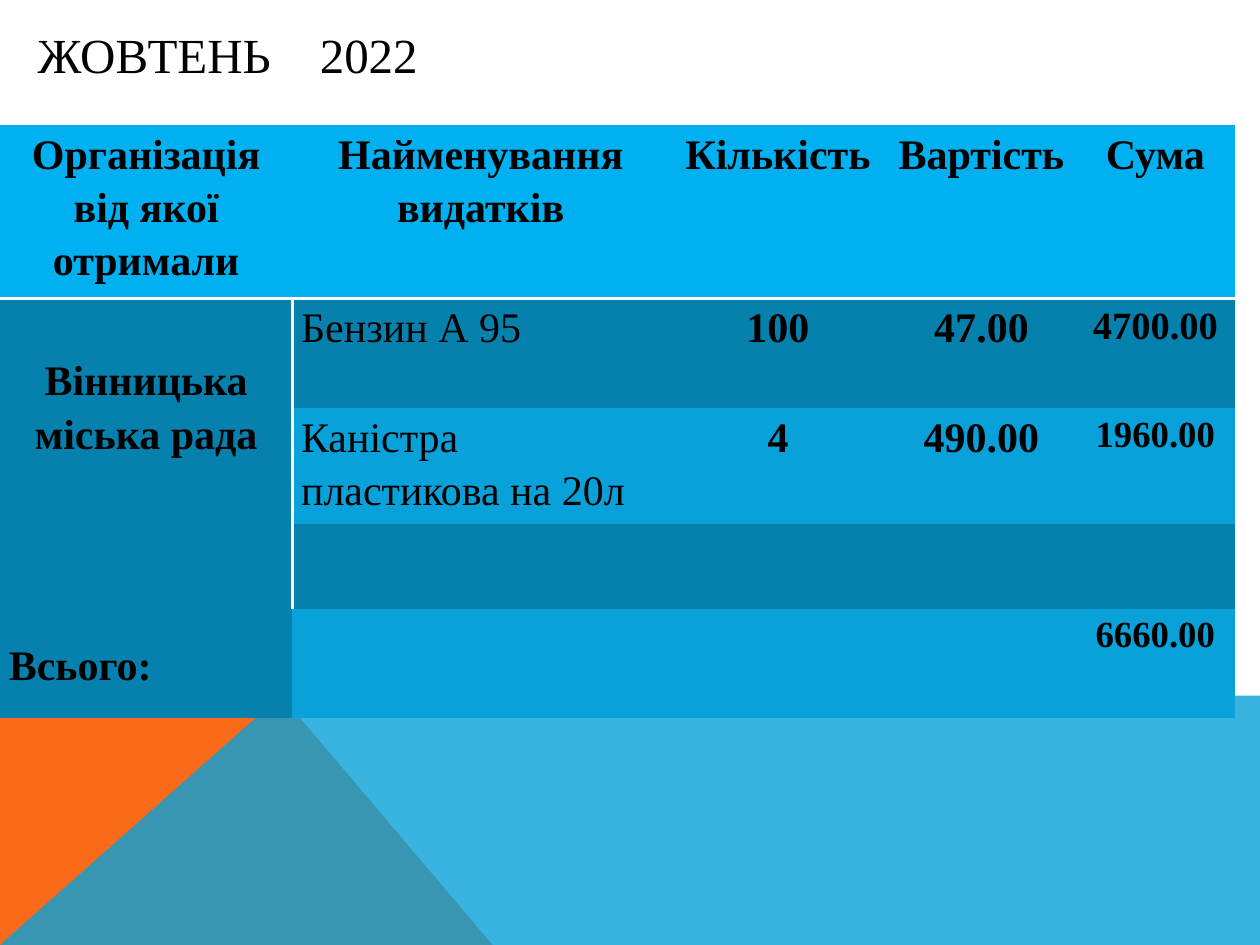
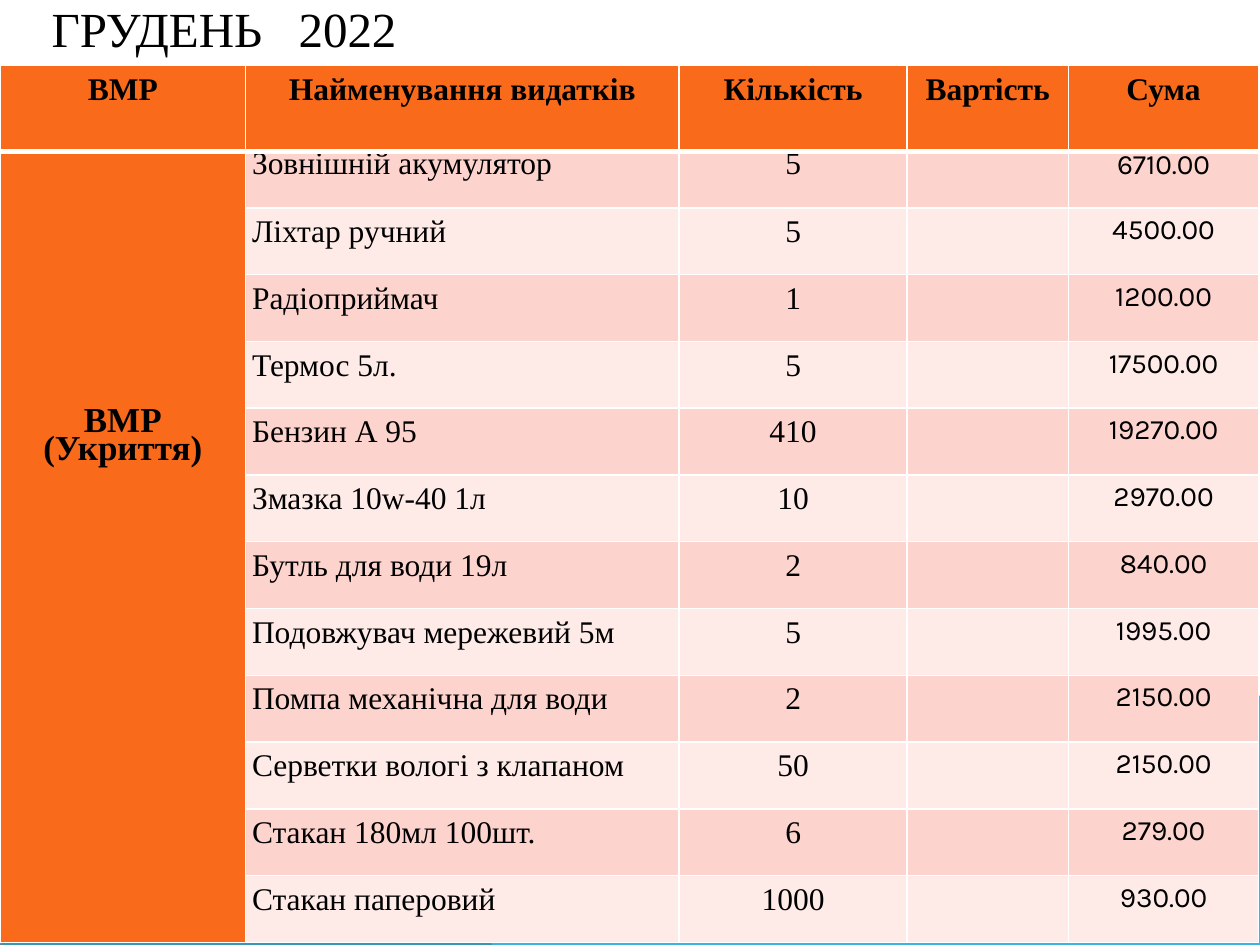
from pptx import Presentation
from pptx.dml.color import RGBColor
from pptx.enum.text import MSO_ANCHOR as Anchor, PP_ALIGN as Align
from pptx.oxml.ns import qn
from pptx.util import Inches, Pt
from lxml.etree import SubElement

SERIF, SANS = "Times New Roman", "Karla"
BLACK, WHITE = "000000", "FFFFFF"
ORANGE, BLUE, DEEP_BLUE, SKY = "F96A1B", "08A1D9", "0681AE", "00B0F0"
PINK, PALE_PINK = "FDD4CD", "FEEBE8"
WIDTH, HEIGHT = 10, 7.5
NO_STYLE = "{2D5ABB26-0587-4C30-8999-92F81FD0307C}"

OCTOBER = [
    ["Організація\nвід якої отримали", "Найменування видатків", "Кількість", "Вартість", "Сума"],
    ["Вінницька\nміська рада", "Бензин А 95", "100", "47.00", "4700.00"],
    ["", "Каністра пластикова на 20л", "4", "490.00", "1960.00"],
    ["", "", "", "", ""],
    ["Всього:", "", "", "", "6660.00"],
]
DECEMBER_HEADER = ["ВМР", "Найменування видатків", "Кількість", "Вартість", "Сума"]
DECEMBER_ITEMS = [
    ("Зовнішній акумулятор", "5", "6710.00"),
    ("Ліхтар ручний", "5", "4500.00"),
    ("Радіоприймач", "1", "1200.00"),
    ("Термос 5л.", "5", "17500.00"),
    ("Бензин А 95", "410", "19270.00"),
    ("Змазка 10w-40 1л", "10", "2970.00"),
    ("Бутль для води 19л", "2", "840.00"),
    ("Подовжувач мережевий 5м", "5", "1995.00"),
    ("Помпа механічна для води", "2", "2150.00"),
    ("Серветки вологі з клапаном", "50", "2150.00"),
    ("Стакан 180мл 100шт.", "6", "279.00"),
    ("Стакан паперовий", "1000", "930.00"),
]


def rgb(color):
    return RGBColor.from_string(color)


def write(tf, text, size=18, font=SERIF, color=BLACK, bold=False,
          align=Align.LEFT, spacing=1.0):
    """Fill a text frame, one paragraph for each line of the text."""
    for i, line in enumerate(text.split("\n")):
        p = tf.add_paragraph() if i else tf.paragraphs[0]
        p.alignment, p.line_spacing = align, spacing
        r = p.add_run()
        r.text = line
        r.font.size, r.font.name, r.font.bold = Pt(size), font, bold
        r.font.color.rgb = rgb(color)


def add_facet(s, points, color, alpha=100):
    """Draw a polygon whose points are shares of the slide's size."""
    pts = [(Inches(x * WIDTH), Inches(y * HEIGHT)) for x, y in points]
    builder = s.shapes.build_freeform(*pts[0])
    builder.add_line_segments(pts[1:], close=True)
    sp = builder.convert_to_shape()
    sp.shadow.inherit = False
    sp.line.fill.background()
    sp.fill.solid()
    sp.fill.fore_color.rgb = rgb(color)
    if alpha < 100:
        clr = sp.fill._xPr.find(".//" + qn("a:srgbClr"))
        SubElement(clr, qn("a:alpha"), val=str(alpha * 1000))


def add_base(prs):
    """Start a slide with the two facets at its foot."""
    s = prs.slides.add_slide(prs.slide_layouts[6])
    top, apex = 0.736, 0.223
    add_facet(s, [(0, 1), (0, top), (apex, top), (0.391, 1)], ORANGE)
    add_facet(s, [(0, 1), (apex, top), (1, top), (1, 1)], BLUE, alpha=80)
    return s


def add_title(s, box, month, year, indent, tab):
    """Place the month, and the year at a tab stop."""
    tf = s.shapes.add_textbox(*map(Inches, box)).text_frame
    tf.word_wrap, tf.vertical_anchor = True, Anchor.MIDDLE
    tf.margin_left = Inches(indent)
    write(tf, f"{month}\t{year}", size=28)
    tabs = SubElement(tf.paragraphs[0]._p.get_or_add_pPr(), qn("a:tabLst"))
    SubElement(tabs, qn("a:tab"), pos=str(Inches(tab)), algn="l")


def set_borders(cell, **widths):
    """Give a cell white borders; widths in points by side L, R, T, B."""
    tc_pr = cell._tc.get_or_add_tcPr()
    sides = [side for side in "LRTB" if side in widths]
    for i, side in enumerate(sides):
        ln = SubElement(tc_pr, qn(f"a:ln{side}"), w=str(Pt(widths[side])))
        SubElement(SubElement(ln, qn("a:solidFill")), qn("a:srgbClr"), val=WHITE)
        tc_pr.insert(i, ln)


def add_grid(s, left, top, cols, rows):
    """Add a plain table with the given column widths and row heights."""
    frame = s.shapes.add_table(len(rows), len(cols), Inches(left), Inches(top),
                               Inches(sum(cols)), Inches(sum(rows)))
    table = frame.table
    table.first_row = table.horz_banding = False
    table._tbl.tblPr.find(qn("a:tableStyleId")).text = NO_STYLE
    for column, width in zip(table.columns, cols):
        column.width = Inches(width)
    for row, height in zip(table.rows, rows):
        row.height = Inches(height)
    return table


def fill_cell(cell, text, fill, side, top=0.0, **fmt):
    """Colour a cell and write its text, with side and top insets."""
    cell.fill.solid()
    cell.fill.fore_color.rgb = rgb(fill)
    if text:
        cell.margin_left = cell.margin_right = Inches(side)
        cell.margin_top, cell.margin_bottom = Inches(top), 0
        write(cell.text_frame, text, **fmt)


def build_october(prs):
    s = add_base(prs)
    add_title(s, (0.2, 0.13, 4.34, 0.6), "ЖОВТЕНЬ", "2022", indent=0.1, tab=2.24)
    table = add_grid(s, 0, 0.99, [2.32, 2.99, 1.73, 1.5, 1.26],
                     [1.21, 0.87, 0.87, 0.67, 0.87])
    sum_sizes = {1: 22, 2: 21, 4: 21}
    for i, row in enumerate(OCTOBER):
        for j, text in enumerate(row):
            cell = table.cell(i, j)
            is_item = i > 0 and j == 1
            is_total = i == 4 and j == 0
            fill = SKY if i == 0 else DEEP_BLUE if j == 0 or i % 2 else BLUE
            fill_cell(cell, text, fill, side=0.07,
                      top=0.42 if (i, j) == (1, 0) else 0,
                      size=sum_sizes.get(i, 24) if j == 4 else 24,
                      bold=not is_item, spacing=1.15,
                      align=Align.LEFT if is_item or is_total else Align.CENTER)
            if i == 0:
                set_borders(cell, B=2)
            elif j == 0 and not is_total:
                set_borders(cell, R=2)
    table.cell(4, 0).vertical_anchor = Anchor.MIDDLE
    table.cell(1, 0).merge(table.cell(3, 0))


def build_december(prs):
    s = add_base(prs)
    add_title(s, (0.02, 0, 3.49, 0.44), "ГРУДЕНЬ", "2022", indent=0.39, tab=1.96)
    count = len(DECEMBER_ITEMS)
    table = add_grid(s, 0, 0.52, [1.95, 3.44, 1.81, 1.28, 1.51],
                     [0.68, 0.45] + [0.53] * (count - 1))
    inset = dict(side=0.05, top=0.01)

    # Header row
    for j, text in enumerate(DECEMBER_HEADER):
        cell = table.cell(0, j)
        fill_cell(cell, text, ORANGE, **inset, bold=True, align=Align.CENTER, spacing=1.15)
        set_borders(cell, L=1, R=1, T=1, B=3)

    # Item rows
    for i, (item, amount, total) in enumerate(DECEMBER_ITEMS, 1):
        fill = PINK if i % 2 else PALE_PINK
        spacing = Pt(16.5) if i == 1 else 1.15
        centred = dict(align=Align.CENTER, spacing=spacing)
        fill_cell(table.cell(i, 1), item, fill, **inset, spacing=spacing)
        fill_cell(table.cell(i, 2), amount, fill, **inset, **centred)
        fill_cell(table.cell(i, 3), "", fill, **inset)
        fill_cell(table.cell(i, 4), total, fill, **inset, size=16, font=SANS, **centred)
        for j in range(5):
            set_borders(table.cell(i, j), L=1, R=1, B=1)

    # Recipient, across all items
    recipient = table.cell(1, 0)
    recipient.merge(table.cell(count, 0))
    fill_cell(recipient, "ВМР\n(Укриття)", ORANGE, side=0.05, top=2.06, size=20,
              bold=True, align=Align.CENTER, spacing=Pt(16.5))


def main():
    prs = Presentation()
    prs.slide_width, prs.slide_height = Inches(WIDTH), Inches(HEIGHT)
    build_october(prs)
    build_december(prs)
    prs.save("out.pptx")


if __name__ == "__main__":
    main()
